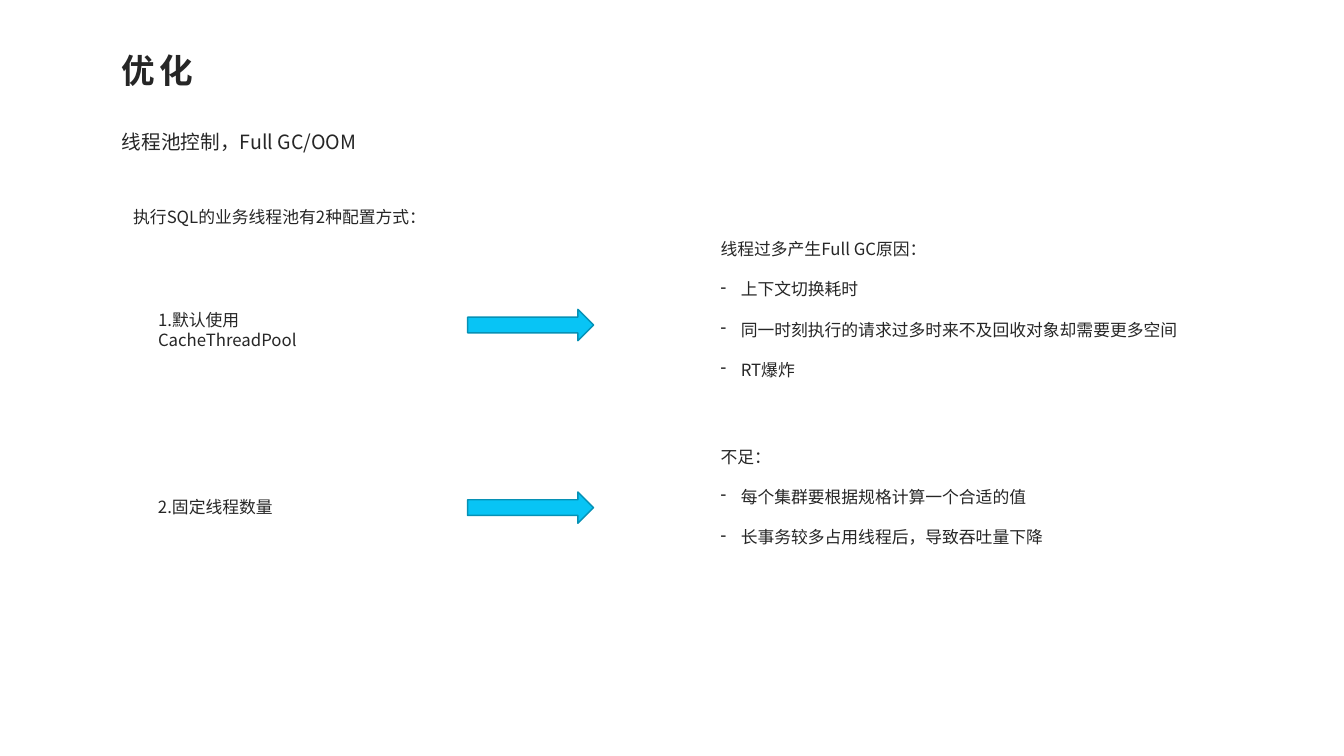
import pptx
import pptx.dml.color
import pptx.enum.shapes
import pptx.oxml.ns
import pptx.util
import lxml.etree

# Grid: 48 columns by 27 rows
SLIDE_WIDTH = pptx.util.Inches(13.33)
SLIDE_HEIGHT = pptx.util.Inches(7.5)
COLUMN = SLIDE_WIDTH / 48
ROW = SLIDE_HEIGHT / 27

FONT = "Noto Sans CJK SC"
LINE_HEIGHT = 1.2
BODY_SIZE = 12
INK = pptx.dml.color.RGBColor(0x26, 0x26, 0x26)
ARROW_FILL = pptx.dml.color.RGBColor(0x08, 0xC4, 0xF5)
ARROW_EDGE = pptx.dml.color.RGBColor(0x06, 0x91, 0xB5)

TITLE_COLUMN = 4
OPTION_COLUMN = 5.29
ARROW_COLUMN = 16.7
REASON_COLUMN = 25.38

# Option text, width, row; arrow row; heading, points, row and height
OPTIONS = [
    ("1.默认使用CacheThreadPool", 8.4, 10.87, 11.05,
     "线程过多产生Full GC原因：",
     ["上下文切换耗时", "同一时刻执行的请求过多时来不及回收对象却需要更多空间", "RT爆炸"],
     8.35, 5.44),
    ("2.固定线程数量", 4.82, 17.57, 17.57,
     "不足：",
     ["每个集群要根据规格计算一个合适的值", "长事务较多占用线程后，导致吞吐量下降"],
     15.77, 4.72),
]


def place(column, row, columns, rows):
    return (round(column * COLUMN), round(row * ROW),
            round(columns * COLUMN), round(rows * ROW))


def style(paragraph, size, bold=False, tracking=0):
    paragraph.line_spacing = pptx.util.Pt(size * LINE_HEIGHT)
    font = paragraph.font
    font.size = pptx.util.Pt(size)
    font.bold = bold
    font.color.rgb = INK
    font.name = FONT
    # East Asian typeface and letter spacing
    properties = paragraph._p.pPr.find(pptx.oxml.ns.qn("a:defRPr"))
    east_asian = lxml.etree.SubElement(properties, pptx.oxml.ns.qn("a:ea"))
    east_asian.set("typeface", FONT)
    if tracking:
        properties.set("spc", str(tracking * 100))


def add_dash(paragraph):
    indent = pptx.util.Inches(0.2)
    properties = paragraph._p.get_or_add_pPr()
    properties.set("marL", str(indent))
    properties.set("indent", str(-indent))
    dash = lxml.etree.SubElement(properties, pptx.oxml.ns.qn("a:buChar"))
    dash.set("char", "-")


def add_text(slide, text, area, size=BODY_SIZE, bold=False, tracking=0):
    frame = slide.shapes.add_textbox(*area).text_frame
    frame.word_wrap = True
    frame.text = text
    style(frame.paragraphs[0], size, bold, tracking)
    return frame


def add_reasons(slide, heading, points, area):
    frame = add_text(slide, heading, area)
    for point in points:
        paragraph = frame.add_paragraph()
        paragraph.text = point
        add_dash(paragraph)
        paragraph.space_before = pptx.util.Pt(BODY_SIZE * LINE_HEIGHT)
        style(paragraph, BODY_SIZE)


def add_arrow(slide, area):
    arrow = slide.shapes.add_shape(
        pptx.enum.shapes.MSO_SHAPE.RIGHT_ARROW, *area)
    arrow.shadow.inherit = False
    arrow.fill.solid()
    arrow.fill.fore_color.rgb = ARROW_FILL
    arrow.line.color.rgb = ARROW_EDGE
    arrow.line.width = pptx.util.Pt(1)


def main():
    presentation = pptx.Presentation()
    presentation.slide_width = SLIDE_WIDTH
    presentation.slide_height = SLIDE_HEIGHT
    slide = presentation.slides.add_slide(presentation.slide_layouts[6])

    # Headings
    add_text(slide, "优化", place(TITLE_COLUMN, 1.62, 33.3, 1.91),
             size=24, bold=True, tracking=3)
    add_text(slide, "线程池控制，Full GC/OOM",
             place(TITLE_COLUMN, 4.46, 9.43, 1.26), size=14)
    add_text(slide, "执行SQL的业务线程池有2种配置方式：",
             place(4.4, 7.2, 11.8, 1.12))

    # Each option points to its consequences
    for (option, width, option_row, arrow_row,
         heading, points, reason_row, height) in OPTIONS:
        add_text(slide, option, place(OPTION_COLUMN, option_row, width, 1.12))
        add_arrow(slide, place(ARROW_COLUMN, arrow_row, 4.5, 1.12))
        add_reasons(slide, heading, points,
                    place(REASON_COLUMN, reason_row, 17.2, height))

    presentation.save("out.pptx")


if __name__ == "__main__":
    main()
